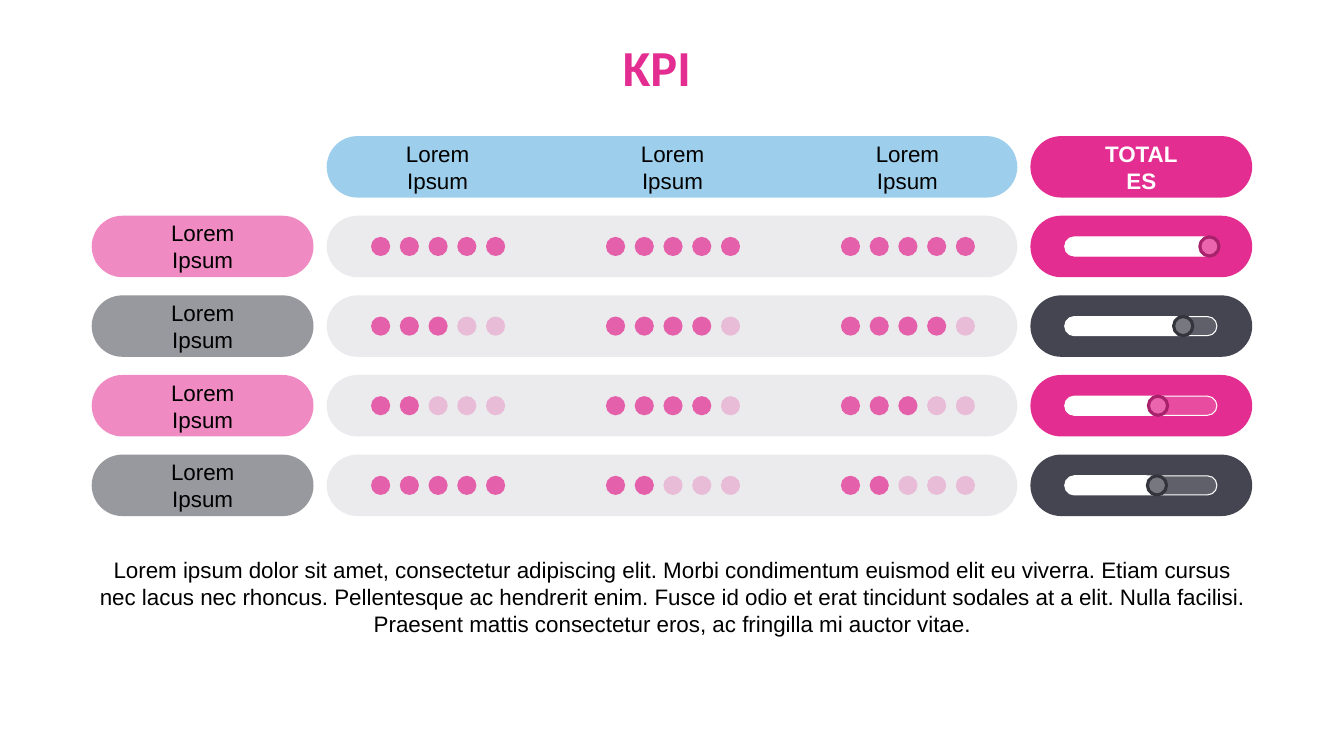
from dataclasses import dataclass

from lxml import etree
from pptx import Presentation
from pptx.dml.color import RGBColor
from pptx.enum.shapes import MSO_SHAPE
from pptx.enum.text import MSO_ANCHOR, MSO_AUTO_SIZE, PP_ALIGN
from pptx.oxml.ns import qn
from pptx.util import Inches, Pt

PILL = MSO_SHAPE.ROUNDED_RECTANGLE
DOT = MSO_SHAPE.OVAL
TOP, MIDDLE = MSO_ANCHOR.TOP, MSO_ANCHOR.MIDDLE
CENTER = PP_ALIGN.CENTER
FIXED = MSO_AUTO_SIZE.NONE


@dataclass(frozen=True)
class Theme:
    """Colours, fonts and type sizes of the slide."""
    pink: str = "E32D91"
    plum: str = "A8216B"
    slate: str = "454551"
    coal: str = "34343D"
    blue: str = "4EA6DC"
    mist: str = "B1B1BD"
    white: str = "FFFFFF"
    black: str = "000000"
    head: str = "Calibri"
    body: str = "Arial"
    large: int = 36
    small: int = 16


THEME = Theme()
LABEL = "Lorem Ipsum"
NOTE = (
    "Lorem ipsum dolor sit amet, consectetur adipiscing elit. Morbi condimentum "
    "euismod elit eu viverra. Etiam cursus nec lacus nec rhoncus. Pellentesque ac "
    "hendrerit enim. Fusce id odio et erat tincidunt sodales at a elit. Nulla "
    "facilisi. Praesent mattis consectetur eros, ac fringilla mi auctor vitae."
)
ROWS = [
    ((5, 5, 5), 1.53, THEME.pink, THEME.plum),
    ((3, 4, 4), 1.27, THEME.slate, THEME.coal),
    ((2, 4, 3), 1.02, THEME.pink, THEME.plum),
    ((5, 2, 2), 1.01, THEME.slate, THEME.coal),
]
LEFT, FIRST, PITCH = 0.91, 1.35, 0.79
SIDE, WIDE, HIGH = 2.2, 6.85, 0.61
MID, LAST = 3.24, 10.22
STEP, SIZE, GAP = 2.33, 0.19, 0.285


def draw(shapes, kind, box, color, alpha=100, line=None, weight=0.75):
    """Add a filled shape with optional transparency and outline."""
    shape = shapes.add_shape(kind, *map(Inches, box))
    shape.shadow.inherit = False
    if kind == PILL:
        shape.adjustments[0] = 0.5
    shape.fill.solid()
    shape.fill.fore_color.rgb = RGBColor.from_string(color)
    if alpha < 100:
        tint = shape.fill._xPr.find(qn("a:solidFill"))[0]
        etree.SubElement(tint, qn("a:alpha"), val=str(alpha * 1000))
    if line:
        shape.line.color.rgb = RGBColor.from_string(line)
        shape.line.width = Pt(weight)
    else:
        shape.line.fill.background()


def write(shape, text, color, size, face, bold=False, anchor=TOP):
    """Fill a text shape with one centred paragraph."""
    frame = shape.text_frame
    frame.word_wrap = True
    frame.auto_size = FIXED
    frame.vertical_anchor = anchor
    frame.margin_left = frame.margin_right = 0
    frame.margin_top = frame.margin_bottom = 0
    frame.text = text
    para = frame.paragraphs[0]
    para.alignment = CENTER
    font = para.font
    font.size, font.name, font.bold = Pt(size), face, bold
    font.color.rgb = RGBColor.from_string(color)


def label(shapes, mid, top, width, text, color=THEME.black, bold=False):
    """Centre a label on the given middle within a row."""
    box = (mid - width / 2, top + 0.17, width, 0.27)
    shape = shapes.add_textbox(*map(Inches, box))
    write(shape, text, color, THEME.small, THEME.body, bold, MIDDLE)


def title(slide, box):
    """Place the slide title."""
    shape = slide.shapes.title
    shape.left, shape.top, shape.width, shape.height = map(Inches, box)
    write(shape, "KPI", THEME.pink, THEME.large, THEME.head, True)


def header(shapes, top):
    """Draw the column heads."""
    draw(shapes, PILL, (MID, top, WIDE, HIGH), THEME.blue, 55)
    draw(shapes, PILL, (LAST, top, SIDE, HIGH), THEME.pink)
    for col in range(3):
        label(shapes, MID + 1.1 + col * STEP, top, 1.18, LABEL)
    label(shapes, LAST + SIDE / 2, top, 0.75, "TOTALES", THEME.white, True)


def score(shapes, left, top, count):
    """Draw five dots, the first of them strong."""
    group = shapes.add_group_shape().shapes
    for i in range(5):
        box = (left + i * GAP, top, SIZE, SIZE)
        draw(group, DOT, box, THEME.pink, 73 if i < count else 25)


def slider(shapes, left, top, width, color, edge):
    """Draw a track filled to a width, with a knob at its end."""
    group = shapes.add_group_shape().shapes
    draw(group, PILL, (left, top, 1.51, SIZE), THEME.white, 15, THEME.white)
    draw(group, PILL, (left, top, width, SIZE), THEME.white)
    box = (left + width - SIZE, top, SIZE, SIZE)
    draw(group, DOT, box, color, 73, edge, 2.25)


def row(shapes, top, counts, width, color, edge):
    """Draw one row with its label, scores and total."""
    draw(shapes, PILL, (LEFT, top, SIDE, HIGH), color, 55)
    draw(shapes, PILL, (MID, top, WIDE, HIGH), THEME.mist, 25)
    draw(shapes, PILL, (LAST, top, SIDE, HIGH), color)
    label(shapes, LEFT + SIDE / 2, top, 1.18, LABEL)
    inner = top + (HIGH - SIZE) / 2
    for col, count in enumerate(counts):
        score(shapes, MID + 0.44 + col * STEP, inner, count)
    slider(shapes, LAST + 0.34, inner, width, color, edge)


def note(shapes, box):
    """Place the paragraph below the grid."""
    shape = shapes.add_textbox(*map(Inches, box))
    write(shape, NOTE, THEME.black, THEME.small, THEME.body)


def main():
    """Build and save the slide."""
    deck = Presentation()
    deck.slide_width, deck.slide_height = Inches(13.33), Inches(7.5)
    slide = deck.slides.add_slide(deck.slide_layouts[5])
    title(slide, (1.45, 0.36, 10.13, 0.61))
    header(slide.shapes, FIRST)
    for i, data in enumerate(ROWS, 1):
        row(slide.shapes, FIRST + i * PITCH, *data)
    note(slide.shapes, (0.92, 5.52, 11.5, 0.81))
    deck.save("out.pptx")


if __name__ == "__main__":
    main()
